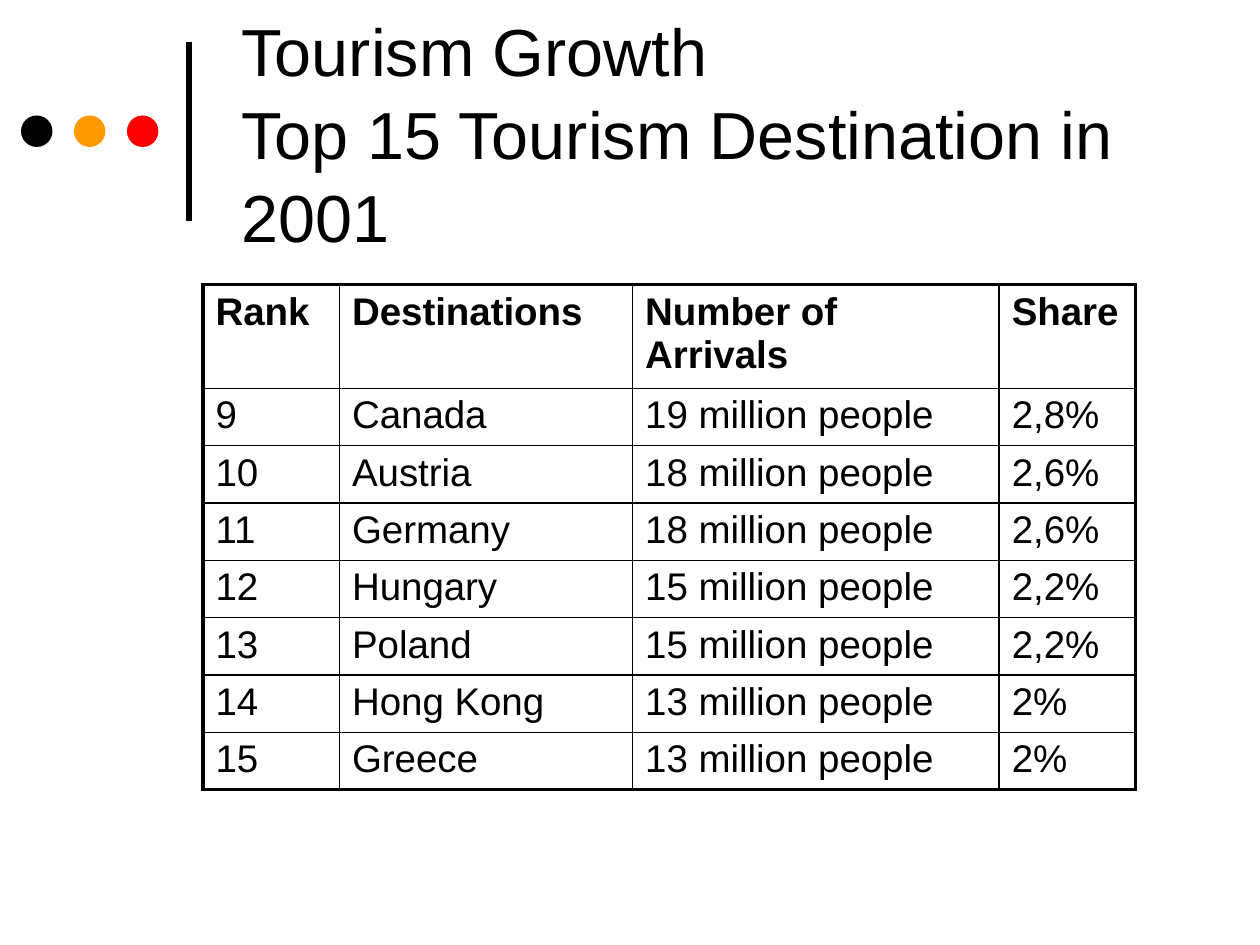
import pptx
import pptx.util
import pptx.dml.color
import pptx.enum.shapes
import pptx.enum.text
import pptx.oxml

Pt = pptx.util.Pt
Color = pptx.dml.color.RGBColor
BLACK = Color(0, 0, 0)
ORANGE = Color(0xFF, 0x99, 0)
RED = Color(0xFF, 0, 0)
WHITE = Color(0xFF, 0xFF, 0xFF)
NS = 'xmlns:a="http://schemas.openxmlformats.org/drawingml/2006/main"'

HEAD = ("Rank", "Destinations", "Number of Arrivals", "Share")
RANKS = (
    ("Canada", 19, "2,8%"),
    ("Austria", 18, "2,6%"),
    ("Germany", 18, "2,6%"),
    ("Hungary", 15, "2,2%"),
    ("Poland", 15, "2,2%"),
    ("Hong Kong", 13, "2%"),
    ("Greece", 13, "2%"),
)


def write(frame, text, size=22, bold=False, space=1.0):
    """Put formatted text into a text frame."""
    frame.word_wrap = True
    frame.text = text
    para = frame.paragraphs[0]
    para.line_spacing = space
    for run in para.runs:
        run.font.name = "Arial"
        run.font.size = Pt(size)
        run.font.bold = bold
        run.font.color.rgb = BLACK


def add_mark(slide, left, top, width, height):
    """Draw three dots and the upright rule to their right."""
    size = 18
    step = 30.25
    for i, color in enumerate((BLACK, ORANGE, RED)):
        dot = slide.shapes.add_shape(
            pptx.enum.shapes.MSO_SHAPE.OVAL, Pt(left + i * step),
            Pt(top + (height - size) / 2), Pt(size), Pt(size))
        dot.shadow.inherit = False
        dot.fill.solid()
        dot.fill.fore_color.rgb = color
        dot.line.fill.background()
    right = Pt(left + width)
    rule = slide.shapes.add_connector(
        pptx.enum.shapes.MSO_CONNECTOR.STRAIGHT,
        right, Pt(top + height), right, Pt(top))
    rule.line.color.rgb = BLACK
    rule.line.width = Pt(3)
    rule._element.spPr.append(pptx.oxml.parse_xml(f"<a:effectLst {NS}/>"))


def add_title(slide, left, top, width, height):
    """Add the title, centred upright in its box."""
    box = slide.shapes.add_textbox(Pt(left), Pt(top), Pt(width), Pt(height))
    box.text_frame.vertical_anchor = pptx.enum.text.MSO_ANCHOR.MIDDLE
    write(box.text_frame, "Tourism Growth\vTop 15 Tourism Destination in 2001",
          size=38, space=1.04)


def set_edge(cell, side, width):
    """Draw one black border of a cell."""
    cell._tc.get_or_add_tcPr().append(pptx.oxml.parse_xml(
        f'<a:{side} {NS} w="{Pt(width)}"><a:solidFill>'
        f'<a:srgbClr val="{BLACK}"/></a:solidFill></a:{side}>'))


def add_ranks(slide, left, top, width, height):
    """Add the ranking table with a heavy outer frame."""
    rows = [HEAD] + [(str(rank), place, f"{count} million people", share)
                     for rank, (place, count, share) in enumerate(RANKS, 9)]
    last, end = len(rows) - 1, len(HEAD) - 1
    table = slide.shapes.add_table(
        len(rows), len(HEAD), Pt(left), Pt(top), Pt(width), Pt(height)).table
    table.first_row = table.horz_banding = False
    for col, part in zip(table.columns, (78, 167.5, 209.5, 78)):
        col.width = Pt(width * part / 533)
    first = 56
    for r, row in enumerate(rows):
        table.rows[r].height = Pt(first if r == 0 else (height - first) / last)
        for c, text in enumerate(row):
            cell = table.cell(r, c)
            cell.margin_top = cell.margin_bottom = Pt(3.2)
            write(cell.text_frame, text, bold=r == 0)
            edges = {"lnL": c == 0, "lnR": c == end,
                     "lnT": r == 0, "lnB": r == last}
            for side, outer in edges.items():
                set_edge(cell, side, 2.25 if outer else 1)
            cell.fill.solid()
            cell.fill.fore_color.rgb = WHITE


def main():
    """Build and save the slide."""
    deck = pptx.Presentation()
    deck.slide_width, deck.slide_height = Pt(720), Pt(540)
    slide = deck.slides.add_slide(deck.slide_layouts[6])
    add_mark(slide, 12, 24, 96, 102)
    add_title(slide, 131, 15, 552, 120)
    add_ranks(slide, 116, 162.75, 533, 279)
    deck.save("out.pptx")


if __name__ == "__main__":
    main()
